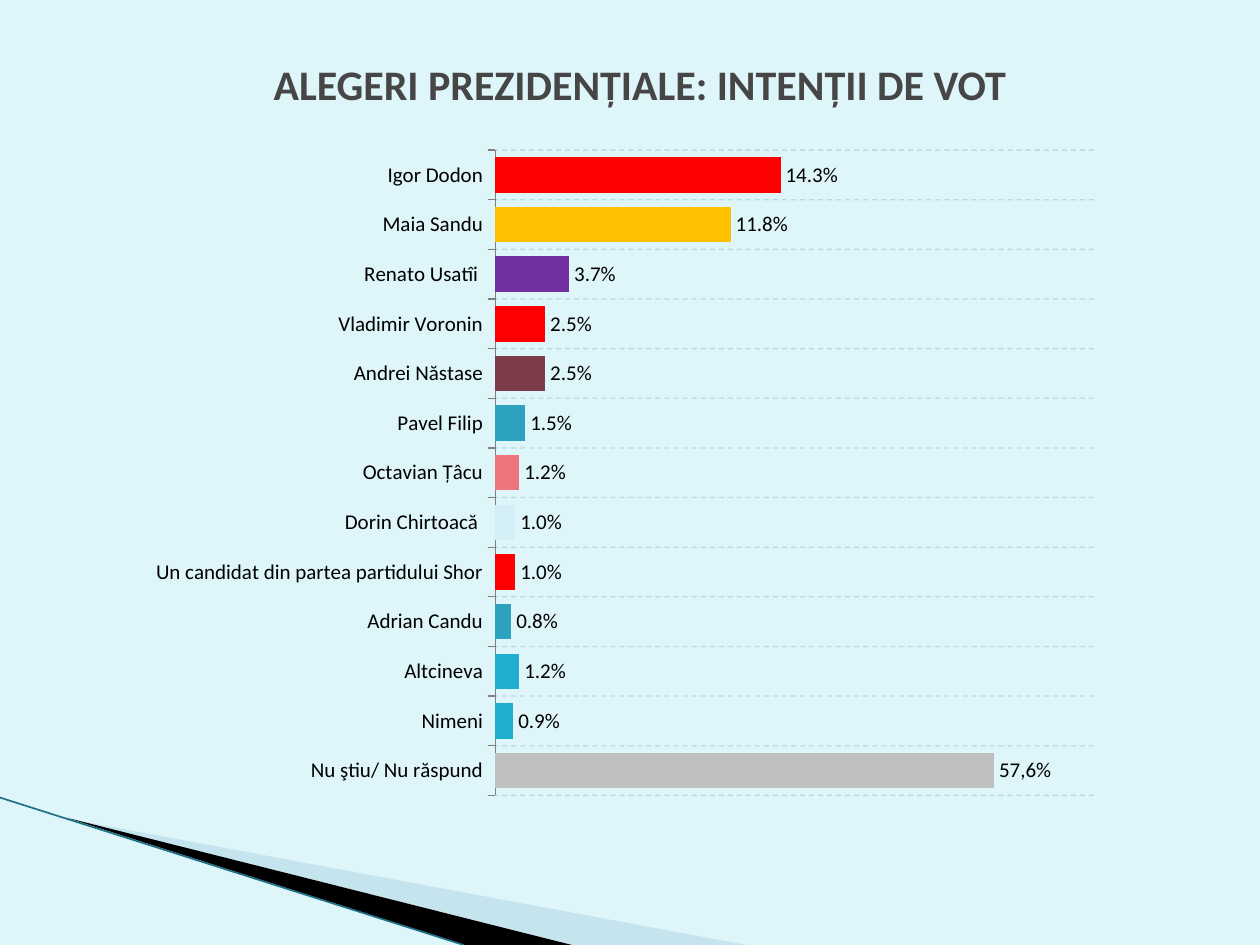
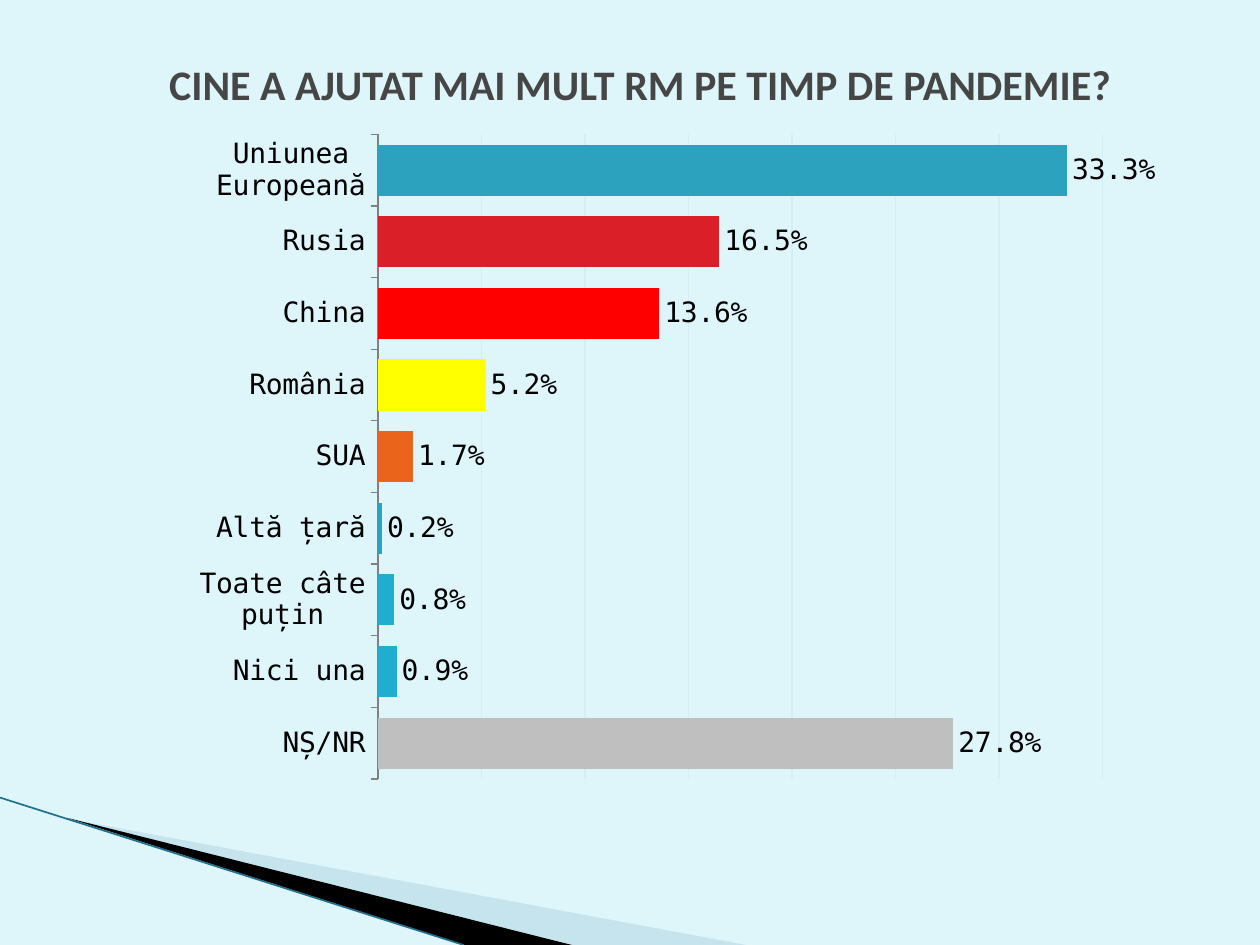
import pptx
import pptx.util
import pptx.chart.data
import pptx.dml.color
import pptx.enum.chart
import pptx.enum.dml
import pptx.enum.shapes
import pptx.enum.text
import pptx.oxml
import pptx.oxml.ns

Inches = pptx.util.Inches
Pt = pptx.util.Pt
RGBColor = pptx.dml.color.RGBColor
enums = pptx.enum.chart

# Colours
SKY = RGBColor(0xDE, 0xF5, 0xFA)
MIST = RGBColor(0xA0, 0xCB, 0xDC)
DEEP = RGBColor(0x1F, 0x70, 0x8A)
BLACK = RGBColor(0, 0, 0)
SLATE = RGBColor(0x46, 0x46, 0x46)
AXIS = RGBColor(0x80, 0x80, 0x80)
GREY = RGBColor(0xBF, 0xBF, 0xBF)
TEAL = RGBColor(0x2D, 0xA2, 0xBF)
CYAN = RGBColor(0x1F, 0xAE, 0xCD)
PALE = RGBColor(0xD3, 0xEE, 0xF5)
PINK = RGBColor(0xEC, 0x76, 0x7C)
WINE = RGBColor(0x7D, 0x3C, 0x4A)
VIOLET = RGBColor(0x70, 0x30, 0xA0)
AMBER = RGBColor(0xFF, 0xC0, 0x00)
RED = RGBColor(0xFF, 0, 0)
CRIMSON = RGBColor(0xDA, 0x1F, 0x28)
ORANGE = RGBColor(0xEB, 0x64, 0x1B)
YELLOW = RGBColor(0xFF, 0xFF, 0)
GRID = RGBColor(0x21, 0x78, 0x8D)

# Content: bars run from bottom to top as (label, value, colour)
SLIDES = [
    {
        "title": "ALEGERI PREZIDENȚIALE: INTENȚII DE VOT",
        "bars": [
            ("Nu ştiu/ Nu răspund", 0.25, GREY),
            ("Nimeni", 0.009, CYAN),
            ("Altcineva", 0.012, CYAN),
            ("Adrian Candu", 0.008, TEAL),
            ("Un candidat din partea partidului Shor", 0.01, RED),
            ("Dorin Chirtoacă ", 0.01, PALE),
            ("Octavian Țâcu", 0.012, PINK),
            ("Pavel Filip", 0.015, TEAL),
            ("Andrei Năstase", 0.025, WINE),
            ("Vladimir Voronin", 0.025, RED),
            ("Renato Usatîi ", 0.037, VIOLET),
            ("Maia Sandu", 0.118, AMBER),
            ("Igor Dodon", 0.143, RED),
        ],
        "notes": {0: "57,6%"},
        "box": (1.08, 1.08, 7.75, 5.33),
        "plot": (0.368, 0.021, 0.613, 0.961),
        "font": ("Calibri", 12),
        "top": 0.3,
        "grid": "rows",
    },
    {
        "title": "CINE A AJUTAT MAI MULT RM PE TIMP DE PANDEMIE?",
        "bars": [
            ("NȘ/NR", 0.278, GREY),
            ("Nici una", 0.009, CYAN),
            ("Toate câte puțin", 0.008, CYAN),
            ("Altă țară", 0.002, TEAL),
            ("SUA", 0.017, ORANGE),
            ("România", 0.052, YELLOW),
            ("China", 0.136, RED),
            ("Rusia", 0.165, CRIMSON),
            ("Uniunea Europeană", 0.333, TEAL),
        ],
        "notes": {},
        "box": (0.92, 0.92, 8.42, 5.42),
        "plot": (0.247, 0.027, 0.683, 0.944),
        "font": ("DejaVu Sans Mono", 16),
        "top": 0.35,
        "grid": "values",
    },
]

# Corner wedges: outline, colour, opacity in percent
WEDGES = [
    ([(0.55, 6.5), (5.92, 7.5), (4.55, 7.5)], MIST, 40),
    ([(0.53, 6.49), (4.54, 7.5), (3.69, 7.5)], BLACK, 100),
]
EDGE = ((0, 6.33), (3.68, 7.5))


def fade(node, percent):
    """Make the solid colours inside a node partly transparent."""
    for tint in node.iter(pptx.oxml.ns.qn("a:srgbClr")):
        tint.append(pptx.oxml.parse_xml(
            f'<a:alpha {pptx.oxml.ns.nsdecls("a")} val="{percent * 1000}"/>'))


def set_font(font, name, size, color, bold=False):
    font.name, font.size, font.bold = name, Pt(size), bold
    font.color.rgb = color


def add_decor(slide):
    for points, color, percent in WEDGES:
        first, *rest = [(Inches(x), Inches(y)) for x, y in points]
        path = slide.shapes.build_freeform(*first)
        path.add_line_segments(rest, close=True)
        wedge = path.convert_to_shape()
        wedge.shadow.inherit = False
        wedge.fill.solid()
        wedge.fill.fore_color.rgb = color
        wedge.line.fill.background()
        if percent < 100:
            fade(wedge._element.spPr, percent)
    ends = [Inches(n) for point in EDGE for n in point]
    edge = slide.shapes.add_connector(
        pptx.enum.shapes.MSO_CONNECTOR.STRAIGHT, *ends)
    edge.line.color.rgb = DEEP
    edge.line.width = Pt(0.95)
    edge._element.spPr.append(pptx.oxml.parse_xml(
        f'<a:effectLst {pptx.oxml.ns.nsdecls("a")}/>'))


def add_title(slide, text):
    frame = slide.shapes.title.text_frame
    frame.vertical_anchor = pptx.enum.text.MSO_ANCHOR.MIDDLE
    para = frame.paragraphs[0]
    para.alignment = pptx.enum.text.PP_ALIGN.CENTER
    run = para.add_run()
    run.text = text
    set_font(run.font, "Calibri", 24, SLATE, True)


def place_plot(chart, plot):
    """Fix the inner plot area as fractions of the chart."""
    marks = "".join(f'<c:{tag} val="{val}"/>'
                    for tag, val in zip("xywh", plot))
    area = chart._chartSpace.chart.plotArea
    for old in area.findall(pptx.oxml.ns.qn("c:layout")):
        area.remove(old)
    area.insert(0, pptx.oxml.parse_xml(
        f'<c:layout {pptx.oxml.ns.nsdecls("c")}><c:manualLayout>'
        '<c:layoutTarget val="inner"/><c:xMode val="edge"/>'
        f'<c:yMode val="edge"/>{marks}</c:manualLayout></c:layout>'))


def style_axes(chart, top, grid):
    cats, vals = chart.category_axis, chart.value_axis
    cats.major_tick_mark = enums.XL_TICK_MARK.OUTSIDE
    cats.format.line.color.rgb = AXIS
    cats.format.line.width = Pt(0.75)
    vals.minimum_scale, vals.maximum_scale = 0, top
    vals.major_unit = 0.05
    vals.visible = False
    rows = grid == "rows"
    cats.has_major_gridlines = rows
    vals.has_major_gridlines = not rows
    line = (cats if rows else vals).major_gridlines.format.line
    line.color.rgb = GRID if rows else PALE
    line.width = Pt(0.75)
    if rows:
        line.dash_style = pptx.enum.dml.MSO_LINE.DASH
        fade(cats._element.find(pptx.oxml.ns.qn("c:majorGridlines")), 20)


def add_bars(slide, page):
    data = pptx.chart.data.CategoryChartData(number_format="0.0%")
    names, vals, colors = zip(*page["bars"])
    data.categories = names
    data.add_series("Series 1", vals)
    chart = slide.shapes.add_chart(
        enums.XL_CHART_TYPE.BAR_CLUSTERED,
        *map(Inches, page["box"]), data).chart
    chart.has_legend = chart.has_title = False
    set_font(chart.font, *page["font"], BLACK)
    style_axes(chart, page["top"], page["grid"])
    place_plot(chart, page["plot"])

    # Bars
    plot = chart.plots[0]
    plot.gap_width, plot.overlap = 40, -10
    plot.vary_by_categories = False
    series = plot.series[0]
    series.invert_if_negative = False
    series.format.fill.solid()
    series.format.fill.fore_color.rgb = TEAL
    for i, color in enumerate(colors):
        if color != TEAL:
            fill = series.points[i].format.fill
            fill.solid()
            fill.fore_color.rgb = color

    # Labels
    labels = series.data_labels
    labels.show_value = True
    labels.number_format = "0.0%"
    labels.number_format_is_linked = False
    labels.position = enums.XL_LABEL_POSITION.OUTSIDE_END
    set_font(labels.font, *page["font"], BLACK)
    for i, text in page["notes"].items():
        label = series.points[i].data_label
        run = label.text_frame.paragraphs[0].add_run()
        run.text = text
        set_font(run.font, *page["font"], BLACK)
        label.position = enums.XL_LABEL_POSITION.OUTSIDE_END


def main():
    deck = pptx.Presentation()
    deck.slide_width, deck.slide_height = Inches(10), Inches(7.5)
    back = deck.slide_master.background.fill
    back.solid()
    back.fore_color.rgb = SKY
    layout = deck.slide_layouts[5]
    title = layout.placeholders[0]
    title.left, title.top = Inches(0.58), Inches(0.25)
    title.width, title.height = Inches(9), Inches(0.83)
    for page in SLIDES:
        slide = deck.slides.add_slide(layout)
        add_decor(slide)
        add_title(slide, page["title"])
        add_bars(slide, page)
    deck.save("out.pptx")


if __name__ == "__main__":
    main()
